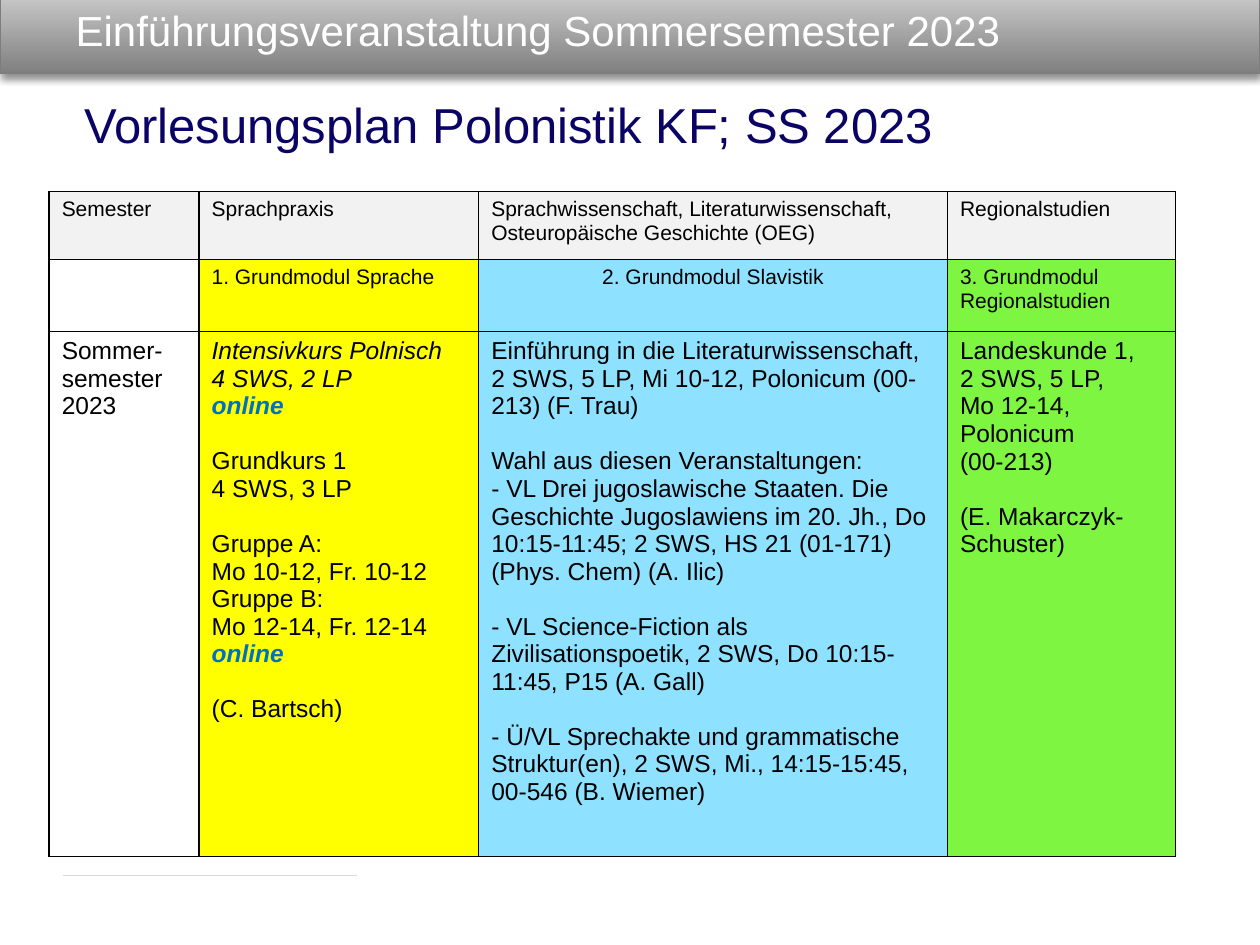
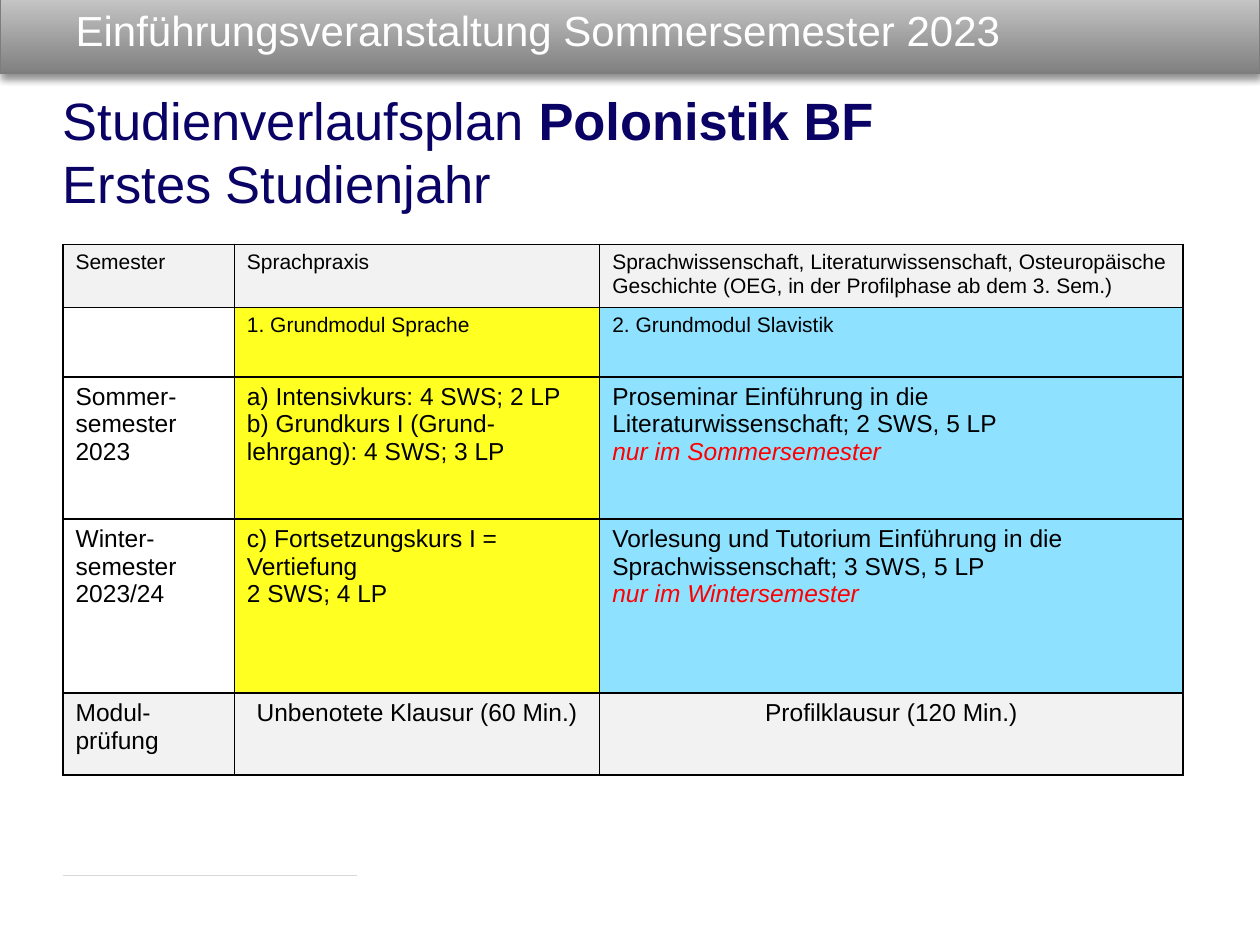
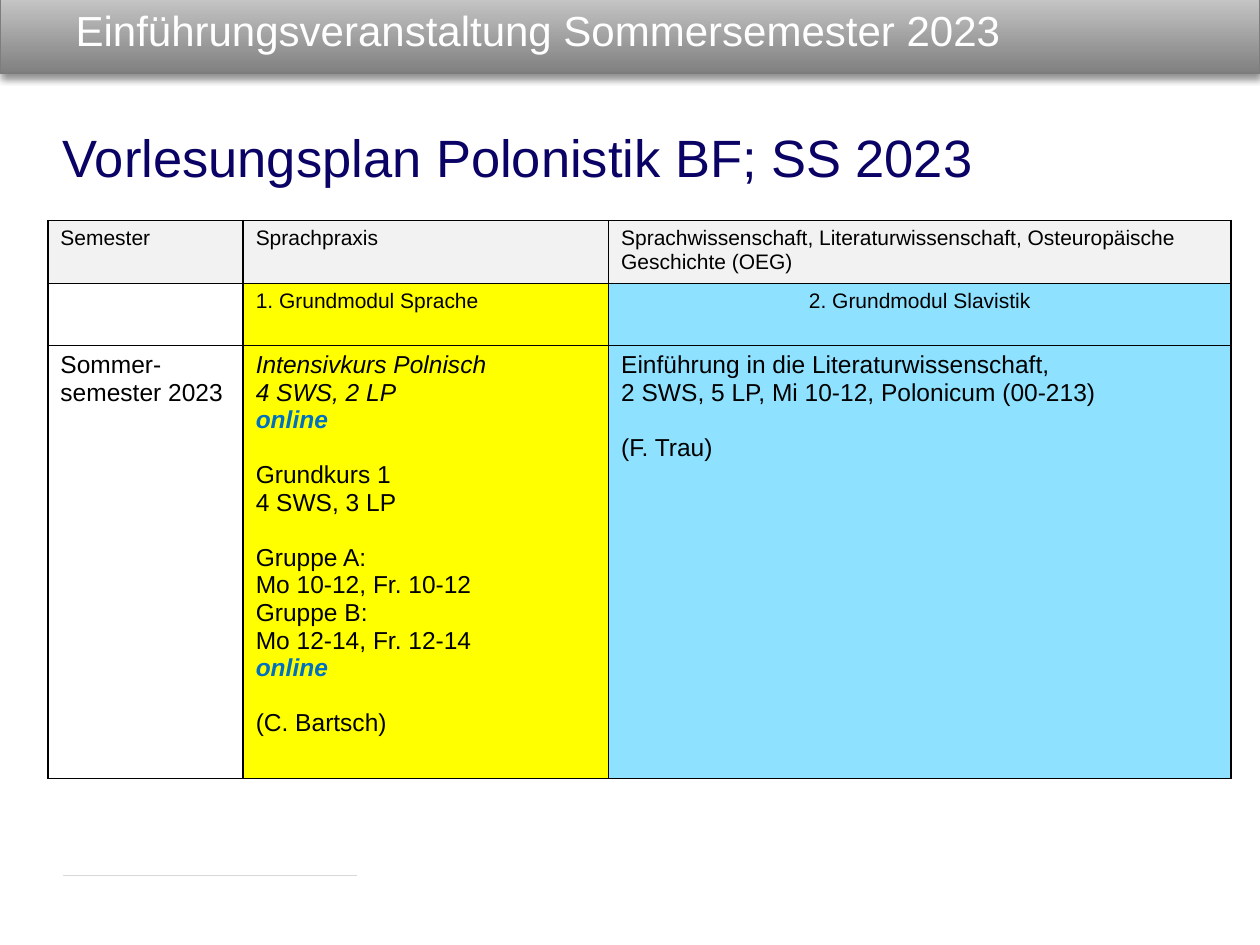
import pptx
import pptx.dml.color
import pptx.enum.shapes
import pptx.enum.text
import pptx.oxml
import pptx.oxml.ns
import pptx.util
import lxml.etree
from dataclasses import dataclass

COLUMNS, ROWS = 100, 75
SLIDE_WIDTH, SLIDE_HEIGHT = pptx.util.Inches(10), pptx.util.Inches(7.5)
FONT = "Arial"
EVENT = "Einführungsveranstaltung Sommersemester 2023"
HEADER_SIZE, BODY_SIZE, GAP = 12, 14, 15.7
COLOURS = {
    "band_dark": "808080", "band_light": "CDCDCD", "band_line": "7D7D7D",
    "rule": "D8D8D8", "white": "FFFFFF", "heading": "0A0365", "black": "000000",
    "online": "0070C0", "notice": "FF0000", "grey": "F2F2F2", "yellow": "FFFF00",
    "soft_yellow": "FFFF21", "blue": "8FE2FF", "green": "7DF541",
}
LOOKS = {
    "plain": {},
    "italic": {"italic": True},
    "online": {"colour": "online", "bold": True, "italic": True},
    "notice": {"colour": "notice", "italic": True},
}


@dataclass
class Line:
    """One paragraph of a table cell."""
    text: str
    look: str = "plain"
    gap: bool = False


@dataclass
class Entry:
    """Content, fill and alignment of a table cell."""
    lines: tuple = ()
    fill: str = ""
    centred: bool = False


def entry(fill, *lines, centred=False):
    """Make a cell entry from strings and lines."""
    return Entry(tuple(Line(item) if isinstance(item, str) else item for item in lines),
                 fill, centred)


def header(*texts):
    """Make a row of grey column headings."""
    return [entry("grey", text) for text in texts]


def across(columns):
    """Turn grid columns into a length."""
    return round(SLIDE_WIDTH * columns / COLUMNS)


def down(rows):
    """Turn grid rows into a length."""
    return round(SLIDE_HEIGHT * rows / ROWS)


def area(left, top, width, height):
    """Turn grid units into a position and a size."""
    return across(left), down(top), across(width), down(height)


def rgb(name):
    """Look up a colour by name."""
    return pptx.dml.color.RGBColor.from_string(COLOURS[name])


def add_span(para, text, size, colour="black", bold=False, italic=False):
    """Append a formatted run to a paragraph."""
    span = para.add_run()
    span.text = text
    span.font.name = FONT
    span.font.size = pptx.util.Pt(size)
    span.font.color.rgb = rgb(colour)
    span.font.bold = bold
    span.font.italic = italic


def effect_list(shape):
    """Return the shape's own list of effects, newly added if missing."""
    tag = pptx.oxml.ns.qn("a:effectLst")
    properties = shape.element.spPr
    found = properties.find(tag)
    return lxml.etree.SubElement(properties, tag) if found is None else found


def add_band(page):
    """Draw the shaded band at the top."""
    band = page.shapes.add_shape(pptx.enum.shapes.MSO_SHAPE.RECTANGLE, *area(0, -0.8, 100, 6.6))
    band.shadow.inherit = False
    band.fill.gradient()
    band.fill.gradient_angle = 90
    for stop, name in zip(band.fill.gradient_stops, ("band_dark", "band_light")):
        stop.color.rgb = rgb(name)
    band.line.color.rgb = rgb("band_line")
    band.line.width = pptx.util.Pt(0.75)
    effect_list(band).append(pptx.oxml.parse_xml(
        f'<a:outerShdw {pptx.oxml.ns.nsdecls("a")} blurRad="{pptx.util.Pt(4)}" '
        f'dist="{pptx.util.Pt(3)}" dir="5400000" rotWithShape="0">'
        f'<a:srgbClr val="{COLOURS["black"]}"><a:alpha val="43000"/></a:srgbClr></a:outerShdw>'))
    return band


def add_rule(page):
    """Draw the thin rule above the footer."""
    rule = page.shapes.add_connector(pptx.enum.shapes.MSO_CONNECTOR.STRAIGHT,
                                     across(5), down(69.5), across(28.3), down(69.5))
    rule.line.color.rgb = rgb("rule")
    rule.line.width = pptx.util.Pt(0.75)
    effect_list(rule)
    return rule


def share_frame(page, layout):
    """Move band and rule into the layout that all slides use."""
    for holder in list(layout.placeholders):
        if holder.placeholder_format.idx:
            layout.shapes.element.remove(holder.element)
    for position, shape in enumerate((add_band(page), add_rule(page)), start=2):
        layout.shapes.element.insert(position, shape.element)


def add_page(deck, layout):
    """Add a slide with the event name in its title."""
    page = deck.slides.add_slide(layout)
    title = page.shapes.title
    title.left, title.top, title.width, title.height = area(5, 0, 92.7, 4.7)
    frame = title.text_frame
    frame.vertical_anchor = pptx.enum.text.MSO_ANCHOR.MIDDLE
    para = frame.paragraphs[0]
    para.alignment = pptx.enum.text.PP_ALIGN.LEFT
    add_span(para, EVENT, 24, "white")
    return page


def add_heading(page, place, size, *rows):
    """Add the heading, each row a list of texts with a bold flag."""
    box = page.shapes.add_textbox(*area(*place))
    box.text_frame.word_wrap = True
    para = box.text_frame.paragraphs[0]
    for number, spans in enumerate(rows):
        if number:
            para.add_line_break()
        for text, bold in spans:
            add_span(para, text, size, "heading", bold)


def add_borders(cell):
    """Give a cell black lines on all sides."""
    for side in ("lnL", "lnR", "lnT", "lnB"):
        cell._tc.get_or_add_tcPr().append(pptx.oxml.parse_xml(
            f'<a:{side} {pptx.oxml.ns.nsdecls("a")} w="{pptx.util.Pt(1)}"><a:solidFill>'
            f'<a:srgbClr val="{COLOURS["black"]}"/></a:solidFill></a:{side}>'))


def fill_cell(cell, content, size):
    """Write and format one table cell."""
    add_borders(cell)
    if content.fill:
        cell.fill.solid()
        cell.fill.fore_color.rgb = rgb(content.fill)
    else:
        cell.fill.background()
    for number, line in enumerate(content.lines):
        para = cell.text_frame.add_paragraph() if number else cell.text_frame.paragraphs[0]
        if content.centred:
            para.alignment = pptx.enum.text.PP_ALIGN.CENTER
        if line.gap:
            para.space_before = pptx.util.Pt(GAP)
        add_span(para, line.text, size, **LOOKS[line.look])


def add_plan(page, left, top, widths, heights, rows):
    """Add a timetable whose first two rows are headings."""
    table = page.shapes.add_table(len(heights), len(widths),
                                  *area(left, top, sum(widths), sum(heights))).table
    table.first_row = table.horz_banding = False
    for column, width in zip(table.columns, widths):
        column.width = across(width)
    for row, height, contents, number in zip(table.rows, heights, rows, range(len(rows))):
        row.height = down(height)
        for cell, content in zip(row.cells, contents):
            fill_cell(cell, content, HEADER_SIZE if number < 2 else BODY_SIZE)


LANGUAGE_MODULE = "1. Grundmodul Sprache"
SLAVIC_MODULE = "2. Grundmodul Slavistik"
SUBJECTS = "Sprachwissenschaft, Literaturwissenschaft, Osteuropäische Geschichte (OEG"
SUMMER = entry("", "Sommer-semester 2023")
LANGUAGE_COURSES = entry(
    "yellow",
    Line("Intensivkurs Polnisch", "italic"), Line("4 SWS, 2 LP", "italic"),
    Line("online", "online"),
    Line("Grundkurs 1", gap=True), "4 SWS, 3 LP",
    Line("Gruppe A:", gap=True), "Mo 10-12, Fr. 10-12",
    "Gruppe B:", "Mo 12-14, Fr. 12-14", Line("online", "online"),
    Line("(C. Bartsch)", gap=True))


def add_core_lectures(page):
    """Fill the slide with the lectures of the core subject."""
    add_heading(page, (5.7, 7, 83.7, 5.7), 28, [("Vorlesungsplan Polonistik KF; SS 2023", False)])
    literature = entry(
        "blue",
        "Einführung in die Literaturwissenschaft, 2 SWS, 5 LP, Mi 10-12, Polonicum (00-213) (F. Trau)",
        Line("Wahl aus diesen Veranstaltungen:", gap=True),
        "- VL Drei jugoslawische Staaten. Die Geschichte Jugoslawiens im 20. Jh., "
        "Do 10:15-11:45; 2 SWS, HS 21 (01-171) (Phys. Chem) (A. Ilic)",
        Line("- VL Science-Fiction als Zivilisationspoetik, 2 SWS, Do 10:15-11:45, P15 (A. Gall)",
             gap=True),
        Line("- Ü/VL Sprechakte und grammatische Struktur(en), 2 SWS, Mi., 14:15-15:45, "
             "00-546 (B. Wiemer)", gap=True))
    region = entry("green", "Landeskunde 1,", "2 SWS, 5 LP,", "Mo 12-14,", "Polonicum",
                   "(00-213)", Line("(E. Makarczyk-Schuster)", gap=True))
    add_plan(page, 3.9, 15.2, (11.9, 22.2, 37.2, 18.1), (5.4, 5.7, 41.7), [
        header("Semester", "Sprachpraxis", SUBJECTS + ")", "Regionalstudien"),
        [Entry(), entry("yellow", LANGUAGE_MODULE), entry("blue", SLAVIC_MODULE, centred=True),
         entry("green", "3. Grundmodul Regionalstudien")],
        [SUMMER, LANGUAGE_COURSES, literature, region]])


def add_study_plan(page):
    """Fill the slide with the first year of the minor subject."""
    add_heading(page, (4, 6.5, 89.9, 11), 30,
                [("Studienverlaufsplan ", False), ("Polonistik BF", True)],
                [("Erstes Studienjahr", False)])
    add_plan(page, 5, 19.4, (13.6, 29, 46.3), (5, 5.5, 11.3, 13.8, 6.5), [
        header("Semester", "Sprachpraxis", SUBJECTS + ", in der Profilphase ab dem 3. Sem.)"),
        [Entry(), entry("soft_yellow", LANGUAGE_MODULE), entry("blue", SLAVIC_MODULE)],
        [SUMMER,
         entry("soft_yellow", "a) Intensivkurs: 4 SWS; 2 LP",
               "b) Grundkurs I (Grund-lehrgang): 4 SWS; 3 LP"),
         entry("blue", "Proseminar Einführung in die Literaturwissenschaft; 2 SWS, 5 LP",
               Line("nur im Sommersemester", "notice"))],
        [entry("", "Winter-semester 2023/24"),
         entry("soft_yellow", "c) Fortsetzungskurs I = Vertiefung", "2 SWS; 4 LP"),
         entry("blue", "Vorlesung und Tutorium Einführung in die",
               "Sprachwissenschaft; 3 SWS, 5 LP", Line("nur im Wintersemester", "notice"))],
        [entry("grey", "Modul-prüfung"),
         entry("grey", "Unbenotete Klausur (60 Min.)", centred=True),
         entry("grey", "Profilklausur (120 Min.)", centred=True)]])


def add_minor_lectures(page):
    """Fill the slide with the lectures of the minor subject."""
    add_heading(page, (4, 9.4, 88.5, 6.1), 30, [("Vorlesungsplan Polonistik BF; SS 2023", False)])
    literature = entry("blue", "Einführung in die Literaturwissenschaft,",
                       "2 SWS, 5 LP, Mi 10-12, Polonicum (00-213)", Line("(F. Trau)", gap=True))
    add_plan(page, 3.8, 17.5, (15.5, 29, 49.4), (5, 4.9, 34.4), [
        header("Semester", "Sprachpraxis", SUBJECTS + ")"),
        [Entry(), entry("yellow", LANGUAGE_MODULE), entry("blue", SLAVIC_MODULE, centred=True)],
        [SUMMER, LANGUAGE_COURSES, literature]])


def main():
    """Build and save the deck."""
    deck = pptx.Presentation()
    deck.slide_width, deck.slide_height = SLIDE_WIDTH, SLIDE_HEIGHT
    layout = deck.slide_layouts.get_by_name("Title Only")
    pages = [add_page(deck, layout) for _ in range(3)]
    share_frame(pages[0], layout)
    for page, add_content in zip(pages, (add_core_lectures, add_study_plan, add_minor_lectures)):
        add_content(page)
    deck.save("out.pptx")


if __name__ == "__main__":
    main()
